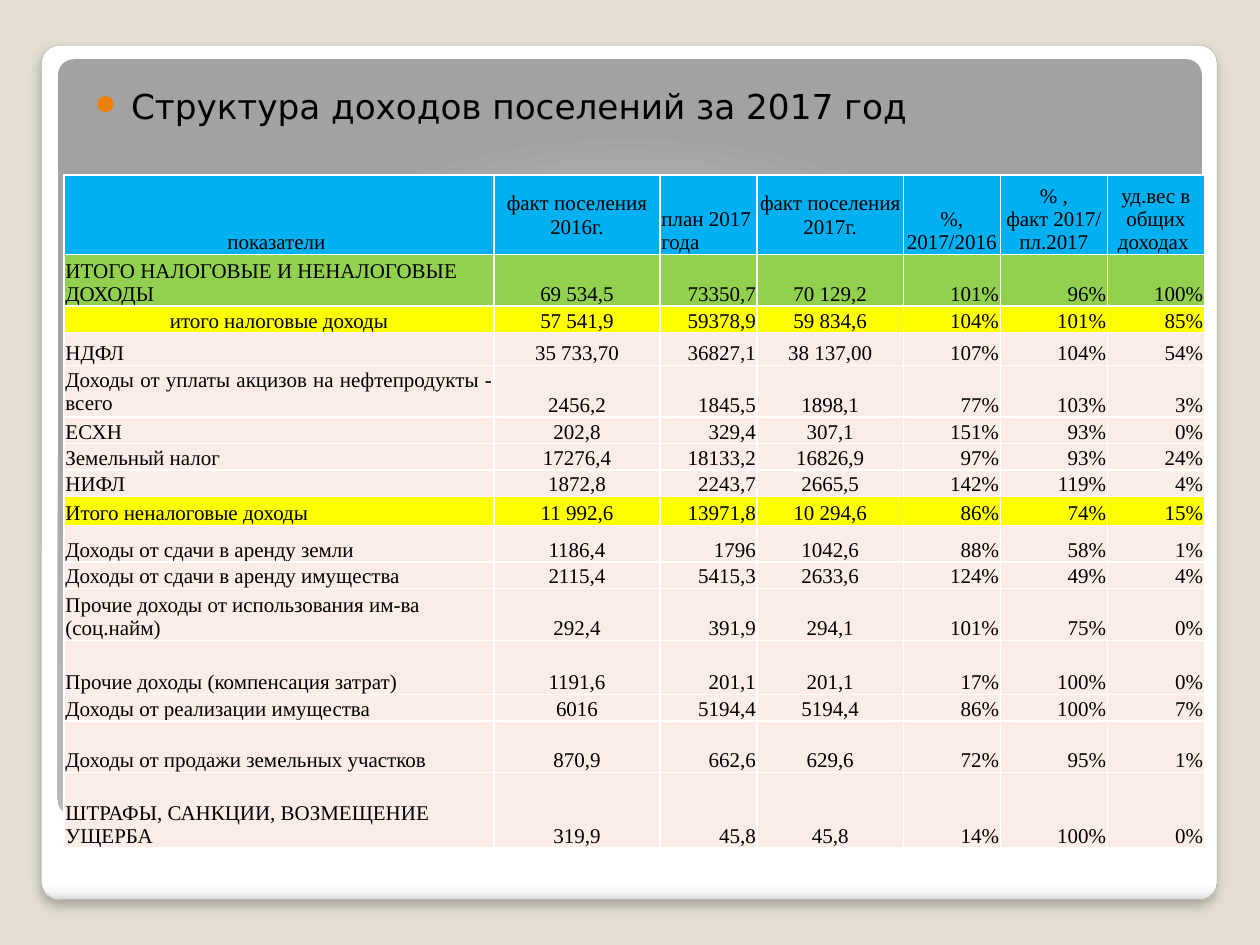
import pptx
import pptx.util
import pptx.dml.color
import pptx.enum.shapes
import pptx.enum.text
import pptx.oxml
import pptx.oxml.ns

Inches = pptx.util.Inches
Pt = pptx.util.Pt
ALIGN = pptx.enum.text.PP_ALIGN
ANCHOR = pptx.enum.text.MSO_ANCHOR
ROUNDED = pptx.enum.shapes.MSO_SHAPE.ROUNDED_RECTANGLE

COLORS = {
    "background": "E3DED1", "white": "FFFFFF", "outline": "A4A4A4",
    "text": "000000", "bullet": "F07F09", "header": "00B0F0",
    "total": "92D050", "subtotal": "FFFF00", "row": "FCECE7",
}
CARD_STOPS = [(0, "FFFFFF"), (98, "FFFFFF"), (99, "F7F7F7"), (100, "DADADA")]
PANEL_STOPS = [(0, "FFFFFF"), (55, "E1E1E1"), (100, "A2A2A2")]
LINEAR = '<a:lin ang="5400000" scaled="0"/>'
RADIAL = '<a:path path="circle"><a:fillToRect l="50000" t="175000" r="50000" b="-75000"/></a:path>'

COLUMN_WIDTHS = [3.41, 1.32, 0.77, 1.16, 0.77, 0.85, 0.77]
COLUMN_ALIGNS = [ALIGN.LEFT, ALIGN.CENTER, ALIGN.RIGHT, ALIGN.CENTER] + [ALIGN.RIGHT] * 3
HEADERS = [
    "показатели ", "факт поселения 2016г.", "план 2017 года", "факт поселения 2017г.",
    "%, 2017/2016", "% ,\nфакт 2017/\nпл.2017", "уд.вес в общих доходах ",
]
ROWS = [
    (0.41, "total", ["ИТОГО НАЛОГОВЫЕ И НЕНАЛОГОВЫЕ ДОХОДЫ", "69 534,5", "73350,7", "70 129,2", "101%", "96%", "100%"]),
    (0.21, "subtotal", ["итого налоговые доходы", "57 541,9", "59378,9", "59 834,6", "104%", "101%", "85%"]),
    (0.26, "row", ["НДФЛ", "35 733,70", "36827,1", "38 137,00", "107%", "104%", "54%"]),
    (0.41, "row", ["Доходы от уплаты акцизов на нефтепродукты - всего ", "2456,2", "1845,5", "1898,1", "77%", "103%", "3%"]),
    (0.21, "row", ["ЕСХН", "202,8", "329,4", "307,1", "151%", "93%", "0%"]),
    (0.21, "row", ["Земельный налог", "17276,4", "18133,2", "16826,9", "97%", "93%", "24%"]),
    (0.21, "row", ["НИФЛ", "1872,8", "2243,7", "2665,5", "142%", "119%", "4%"]),
    (0.23, "subtotal", ["Итого неналоговые доходы", "11 992,6", "13971,8", "10 294,6", "86%", "74%", "15%"]),
    (0.29, "row", ["Доходы от сдачи в аренду земли", "1186,4", "1796", "1042,6", "88%", "58%", "1%"]),
    (0.21, "row", ["Доходы от сдачи в аренду имущества", "2115,4", "5415,3", "2633,6", "124%", "49%", "4%"]),
    (0.41, "row", ["Прочие доходы от использования им-ва (соц.найм)", "292,4", "391,9", "294,1", "101%", "75%", "0%"]),
    (0.43, "row", ["Прочие доходы (компенсация затрат)", "1191,6", "201,1", "201,1", "17%", "100%", "0%"]),
    (0.21, "row", ["Доходы от реализации имущества", "6016", "5194,4", "5194,4", "86%", "100%", "7%"]),
    (0.41, "row", ["Доходы от продажи земельных участков", "870,9", "662,6", "629,6", "72%", "95%", "1%"]),
    (0.6, "row", ["ШТРАФЫ, САНКЦИИ, ВОЗМЕЩЕНИЕ УЩЕРБА", "319,9", "45,8", "45,8", "14%", "100%", "0%"]),
]


def rgb(name):
    return pptx.dml.color.RGBColor.from_string(COLORS[name])


def element(xml):
    head, sep, tail = xml.partition(" ")
    return pptx.oxml.parse_xml(f"{head} {pptx.oxml.ns.nsdecls('a')} {tail}")


def style_run(r, font, size):
    r.font.name = font
    r.font.size = Pt(size)
    r.font.color.rgb = rgb("text")


def add_rounded(s, box, stops, direction):
    sp = s.shapes.add_shape(ROUNDED, *(Inches(v) for v in box))
    sp.adjustments[0] = 0.021
    sp.shadow.inherit = False
    sp.line.fill.background()
    marks = "".join(
        f'<a:gs pos="{pos * 1000}"><a:srgbClr val="{color}"/></a:gs>' for pos, color in stops)
    fill = element(f'<a:gradFill rotWithShape="1"><a:gsLst>{marks}</a:gsLst>{direction}</a:gradFill>')
    sp._element.spPr.find(pptx.oxml.ns.qn("a:prstGeom")).addnext(fill)
    return sp


def add_frame(s, left, top):
    card = add_rounded(s, (left, top, 9.33, 6.78), CARD_STOPS, LINEAR)
    card.line.color.rgb = rgb("outline")
    card.line.width = Pt(0.16)
    card._element.spPr.find(pptx.oxml.ns.qn("a:effectLst")).append(element(
        f'<a:outerShdw blurRad="{Pt(6)}" dist="{Pt(4)}" dir="5400000" algn="t" rotWithShape="0">'
        f'<a:srgbClr val="{COLORS["text"]}"><a:alpha val="25000"/></a:srgbClr></a:outerShdw>'))
    add_rounded(s, (left + 0.13, top + 0.11, 9.08, 6), PANEL_STOPS, RADIAL)


def add_heading(s, left, top, width, height):
    sp = s.shapes.add_textbox(Inches(left), Inches(top), Inches(width), Inches(height))
    tf = sp.text_frame
    tf.word_wrap = True
    tf.margin_left, tf.margin_top = Inches(0.2), Inches(0.1)
    tf.margin_right, tf.margin_bottom = Inches(0.1), Inches(0.05)
    tf.text = "Структура доходов поселений за 2017 год"
    p = tf.paragraphs[0]
    p.space_before = Pt(2.5)
    style_run(p.runs[0], "DejaVu Sans", 19.6)
    pPr = p._p.get_or_add_pPr()
    pPr.set("marL", str(Inches(0.29)))
    pPr.set("indent", str(-Inches(0.29)))
    for xml in (f'<a:buClr ><a:srgbClr val="{COLORS["bullet"]}"/></a:buClr>',
                '<a:buSzPct val="80000"/>', '<a:buChar char="●"/>'):
        pPr.append(element(xml))


def fill_cell(cell, text, color, align, anchor):
    cell.margin_left = cell.margin_right = cell.margin_top = Inches(0.01)
    cell.margin_bottom = 0
    cell.vertical_anchor = anchor
    tcPr = cell._tc.get_or_add_tcPr()
    for side in "LRTB":
        tcPr.append(element(
            f'<a:ln{side} w="{Pt(1)}"><a:solidFill><a:srgbClr val="{COLORS["white"]}"/>'
            f'</a:solidFill></a:ln{side}>'))
    cell.fill.solid()
    cell.fill.fore_color.rgb = rgb(color)
    cell.text_frame.text = text
    for p in cell.text_frame.paragraphs:
        p.alignment = align
        for r in p.runs:
            style_run(r, "Times New Roman", 12)


def add_income_table(s, left, top):
    heights = [0.63] + [height for height, _, _ in ROWS]
    table = s.shapes.add_table(
        len(heights), len(COLUMN_WIDTHS), Inches(left), Inches(top),
        Inches(sum(COLUMN_WIDTHS)), Inches(sum(heights))).table
    table.first_row = table.horz_banding = False
    for column, width in zip(table.columns, COLUMN_WIDTHS):
        column.width = Inches(width)
    for row, height in zip(table.rows, heights):
        row.height = Inches(height)
    for j, text in enumerate(HEADERS):
        fill_cell(table.cell(0, j), text, "header",
                  ALIGN.LEFT if j == 2 else ALIGN.CENTER,
                  ANCHOR.MIDDLE if j in (1, 3) else ANCHOR.BOTTOM)
    for i, (_, color, values) in enumerate(ROWS, 1):
        for j, text in enumerate(values):
            fill_cell(table.cell(i, j), text, color, COLUMN_ALIGNS[j], ANCHOR.BOTTOM)
    table.cell(2, 0).text_frame.paragraphs[0].alignment = ALIGN.CENTER
    excise = table.cell(4, 0)
    excise.vertical_anchor = ANCHOR.MIDDLE
    excise.text_frame.paragraphs[0].alignment = ALIGN.JUSTIFY


def main():
    prs = pptx.Presentation()
    prs.slide_width, prs.slide_height = Inches(10), Inches(7.5)
    s = prs.slides.add_slide(prs.slide_layouts[6])
    s.background.fill.solid()
    s.background.fill.fore_color.rgb = rgb("background")
    add_frame(s, 0.33, 0.36)
    add_heading(s, 0.55, 0.58, 8.95, 0.44)
    add_income_table(s, 0.51, 1.39)
    prs.save("out.pptx")


if __name__ == "__main__":
    main()
